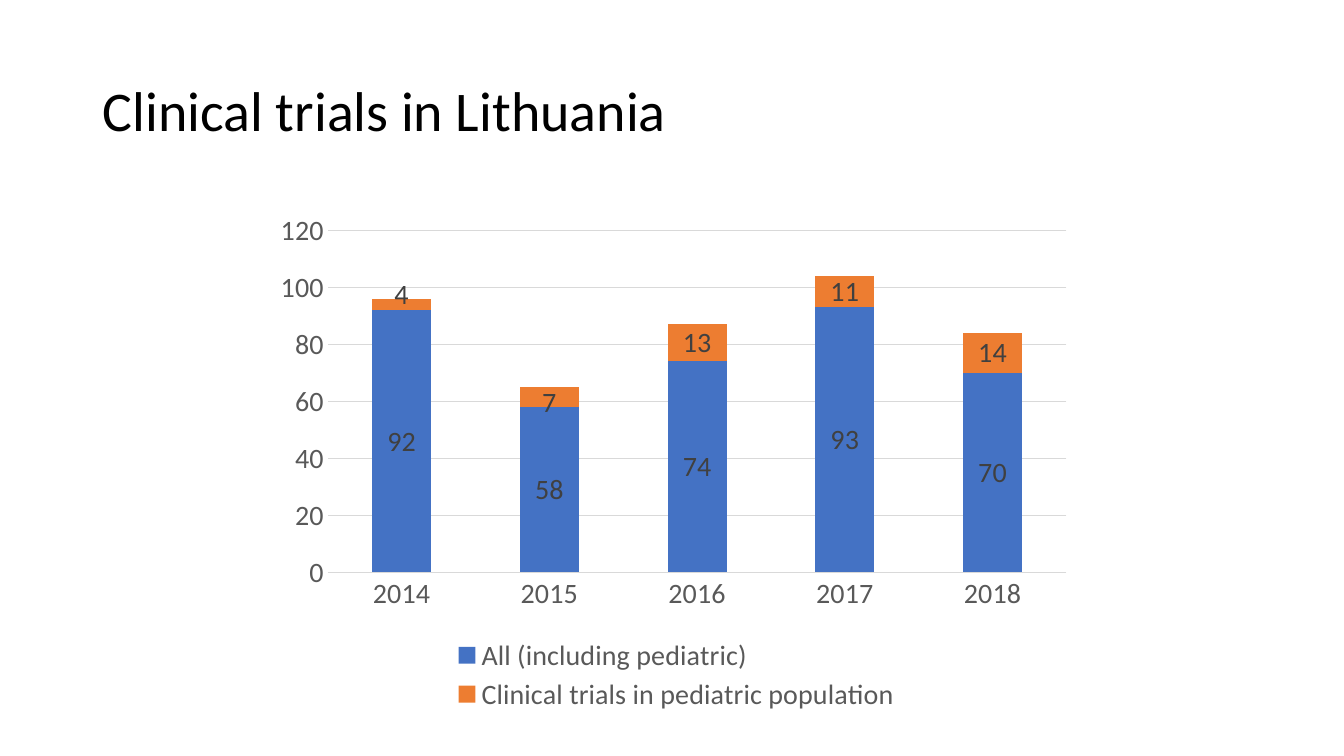
from lxml.etree import SubElement
from pptx import Presentation
from pptx.chart.data import CategoryChartData
from pptx.dml.color import RGBColor
from pptx.enum.chart import (XL_CHART_TYPE, XL_LABEL_POSITION as LabelPosition,
                             XL_LEGEND_POSITION, XL_TICK_MARK as TickMark)
from pptx.enum.text import MSO_ANCHOR, MSO_AUTO_SIZE, PP_ALIGN
from pptx.oxml.ns import qn
from pptx.util import Inches, Pt

BLACK = RGBColor(0x00, 0x00, 0x00)
BLUE = RGBColor(0x44, 0x72, 0xC4)
ORANGE = RGBColor(0xED, 0x7D, 0x31)
AXIS_GRAY = RGBColor(0x59, 0x59, 0x59)
LABEL_GRAY = RGBColor(0x40, 0x40, 0x40)
GRID_GRAY = RGBColor(0xD9, 0xD9, 0xD9)

HEADING = "Clinical trials in Lithuania"
YEARS = ["2014", "2015", "2016", "2017", "2018"]
TRIALS = [
    ("All (including pediatric)", BLUE, [92, 58, 74, 93, 70]),
    ("Clinical trials in pediatric population", ORANGE, [4, 7, 13, 11, 14]),
]
PEDIATRIC_LABEL_SHIFTS = {0: -0.02, 1: 0.01}
PLOT_LAYOUT = {"layoutTarget": "inner", "xMode": "edge", "yMode": "edge",
               "x": 0.08, "y": 0.05, "w": 0.9, "h": 0.67}
LEGEND_LAYOUT = {"xMode": "edge", "yMode": "edge",
                 "x": 0.23, "y": 0.84, "w": 0.55, "h": 0.16}


def style_font(font, color, size=20):
    """Apply the slide's typeface with a size and colour."""
    font.name = "Calibri"
    font.size = Pt(size)
    font.color.rgb = color


def style_line(line):
    """Draw a thin light gray line."""
    line.color.rgb = GRID_GRAY
    line.width = Pt(0.75)


def place(parent, index, settings):
    """Give a chart part a manual layout at the given child index."""
    for old_layout in parent.findall(qn("c:layout")):
        parent.remove(old_layout)
    layout = SubElement(parent, qn("c:layout"))
    parent.insert(index, layout)
    manual = SubElement(layout, qn("c:manualLayout"))
    for key, setting in settings.items():
        SubElement(manual, qn(f"c:{key}")).set("val", str(setting))


def add_heading(slide):
    """Fill the title placeholder."""
    title = slide.shapes.title
    title.left, title.top = Inches(0.92), Inches(0.4)
    title.width, title.height = Inches(11.5), Inches(1.45)
    frame = title.text_frame
    frame.auto_size = MSO_AUTO_SIZE.NONE
    frame.vertical_anchor = MSO_ANCHOR.MIDDLE
    paragraph = frame.paragraphs[0]
    paragraph.alignment = PP_ALIGN.LEFT
    paragraph.line_spacing = 0.9
    run = paragraph.add_run()
    run.text = HEADING
    style_font(run.font, BLACK, 40)


def add_trials_chart(slide):
    """Add the stacked columns of trials per year."""
    trial_data = CategoryChartData()
    trial_data.categories = YEARS
    for name, _, counts in TRIALS:
        trial_data.add_series(name, counts)
    chart = slide.shapes.add_chart(
        XL_CHART_TYPE.COLUMN_STACKED, Inches(2.6), Inches(2.03),
        Inches(8.14), Inches(5.07), trial_data).chart
    chart.has_title = False
    style_font(chart.font, BLACK)

    years, counts_axis = chart.category_axis, chart.value_axis
    for axis in (years, counts_axis):
        axis.major_tick_mark = axis.minor_tick_mark = TickMark.NONE
        style_font(axis.tick_labels.font, AXIS_GRAY)
    style_line(years.format.line)
    counts_axis.format.line.fill.background()
    counts_axis.minimum_scale, counts_axis.maximum_scale = 0, 120
    counts_axis.major_unit = 20
    style_line(counts_axis.major_gridlines.format.line)

    plot = chart.plots[0]
    plot.gap_width, plot.overlap = 150, 100
    plot.vary_by_categories = False
    for series, (_, color, _) in zip(plot.series, TRIALS):
        series.format.fill.solid()
        series.format.fill.fore_color.rgb = color
        labels = series.data_labels
        labels.show_value = True
        labels.position = LabelPosition.CENTER
        style_font(labels.font, LABEL_GRAY)

    pediatric = plot.series[1]
    for index, shift in PEDIATRIC_LABEL_SHIFTS.items():
        label = pediatric.points[index].data_label
        label.position = LabelPosition.CENTER
        style_font(label.font, LABEL_GRAY)
        label_xml = pediatric.data_labels._element.findall(qn("c:dLbl"))[index]
        place(label_xml, 1, {"x": 0, "y": shift})

    chart.has_legend = True
    legend = chart.legend
    legend.position = XL_LEGEND_POSITION.BOTTOM
    legend.include_in_layout = False
    style_font(legend.font, AXIS_GRAY)
    place(legend._element, 1, LEGEND_LAYOUT)
    place(chart._chartSpace.chart.plotArea, 0, PLOT_LAYOUT)


def main():
    """Build and save the slide."""
    deck = Presentation()
    deck.slide_width, deck.slide_height = Inches(13.33), Inches(7.5)
    slide = deck.slides.add_slide(deck.slide_layouts[5])
    add_heading(slide)
    add_trials_chart(slide)
    deck.save("out.pptx")


if __name__ == "__main__":
    main()
